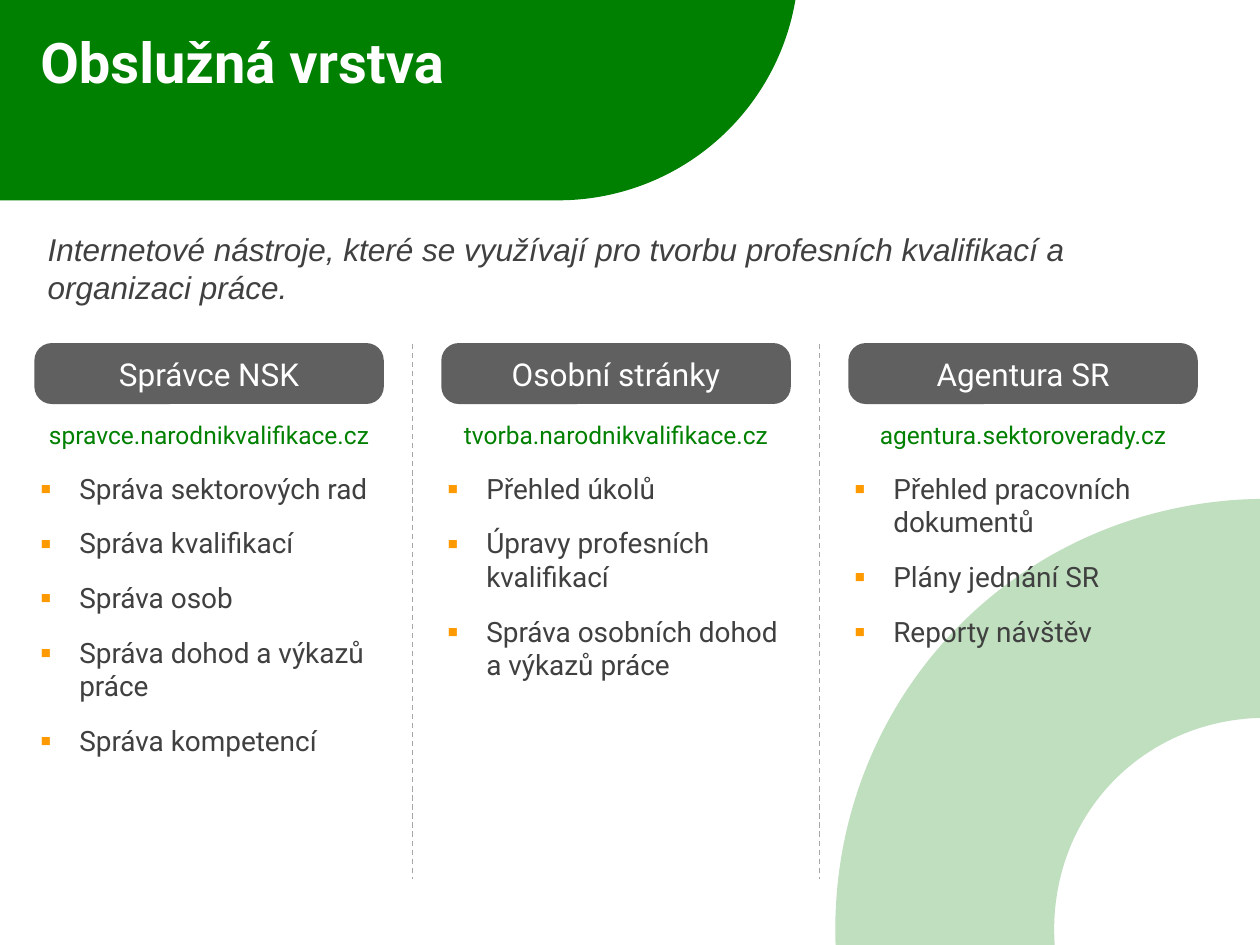
import dataclasses

import lxml.etree
import pptx
import pptx.dml.color
import pptx.enum.dml
import pptx.enum.shapes
import pptx.enum.text
import pptx.oxml.ns
import pptx.util

Align = pptx.enum.text.PP_ALIGN
Anchor = pptx.enum.text.MSO_ANCHOR
Preset = pptx.enum.shapes.MSO_SHAPE


@dataclasses.dataclass(frozen=True)
class Theme:
    green: str = "008000"
    grey: str = "606060"
    text: str = "404040"
    divider: str = "A6A6A6"
    bullet: str = "FF9900"
    white: str = "FFFFFF"
    font: str = "Roboto"
    intro_font: str = "Arial"
    title_size: int = 32
    heading_size: int = 18
    list_size: int = 16
    link_size: int = 14


@dataclasses.dataclass(frozen=True)
class Box:
    left: float
    top: float
    width: float
    height: float

    def rows(self, start, height):
        return Box(self.left, self.top + start, self.width, height)

    def columns(self, count, gap):
        width = (self.width - gap * (count - 1)) / count
        return [Box(self.left + i * (width + gap), self.top, width, self.height)
                for i in range(count)]

    def emu(self):
        return [pptx.util.Inches(v) for v in (self.left, self.top, self.width, self.height)]


THEME = Theme()
SLIDE = Box(0, 0, 10, 7.5)
COLUMN_GAP = 0.47
COLUMNS = [
    ("Správce NSK", "spravce.narodnikvalifikace.cz",
     ["Správa sektorových rad", "Správa kvalifikací", "Správa osob",
      "Správa dohod a výkazů práce", "Správa kompetencí"]),
    ("Osobní stránky", "tvorba.narodnikvalifikace.cz",
     ["Přehled úkolů", "Úpravy profesních kvalifikací",
      "Správa osobních dohod a výkazů práce"]),
    ("Agentura SR", "agentura.sektoroverady.cz",
     ["Přehled pracovních dokumentů", "Plány jednání SR", "Reporty návštěv"]),
]


def rgb(value):
    return pptx.dml.color.RGBColor.from_string(value)


def add_element(parent, tag, **attributes):
    return lxml.etree.SubElement(parent, pptx.oxml.ns.qn(tag), attributes)


def add_bullet(paragraph, indent):
    paragraph.level = 1
    properties = paragraph._p.get_or_add_pPr()
    properties.set("marL", str(pptx.util.Inches(indent)))
    properties.set("indent", str(-pptx.util.Inches(indent)))
    add_element(add_element(properties, "a:buClr"), "a:srgbClr", val=THEME.bullet)
    add_element(properties, "a:buFont", typeface=THEME.font)
    add_element(properties, "a:buChar", char="▪")


def write_text(shape, lines, size, color, font=THEME.font, bold=False, italic=False,
               align=Align.LEFT, anchor=Anchor.TOP, inset=(0.1, 0.05),
               before=0, after=0, bullet_indent=None):
    frame = shape.text_frame
    frame.word_wrap = True
    frame.auto_size = pptx.enum.text.MSO_AUTO_SIZE.NONE
    frame.vertical_anchor = anchor
    frame.margin_left = frame.margin_right = pptx.util.Inches(inset[0])
    frame.margin_top = frame.margin_bottom = pptx.util.Inches(inset[1])
    for index, line in enumerate(lines):
        paragraph = frame.add_paragraph() if index else frame.paragraphs[0]
        if bullet_indent:
            add_bullet(paragraph, bullet_indent)
        paragraph.alignment = align
        paragraph.space_before = pptx.util.Pt(before if index else 0)
        paragraph.space_after = pptx.util.Pt(after)
        run = paragraph.add_run()
        run.text = line
        run.font.name = font
        run.font.size = pptx.util.Pt(size)
        run.font.bold = bold
        run.font.italic = italic
        run.font.color.rgb = rgb(color)


def add_preset(slide, preset, box, color):
    shape = slide.shapes.add_shape(preset, *box.emu())
    shape.shadow.inherit = False
    shape.fill.solid()
    shape.fill.fore_color.rgb = rgb(color)
    shape.line.fill.background()
    return shape


def add_backdrop(slide, arc_box, banner_box):
    arc = add_preset(slide, Preset.BLOCK_ARC, arc_box, THEME.green)
    arc.rotation = 313.9
    color = arc._element.spPr.find(".//" + pptx.oxml.ns.qn("a:srgbClr"))
    add_element(color, "a:alpha", val="25000")
    banner = add_preset(slide, Preset.ROUNDED_RECTANGLE, banner_box, THEME.green)
    banner.adjustments[0] = 0.5


def place_title(slide, box):
    title = slide.shapes.title
    title.left, title.top, title.width, title.height = box.emu()
    write_text(title, ["Obslužná vrstva"], THEME.title_size, THEME.white, bold=True)
    tree = slide.shapes._spTree
    tree.remove(title._element)
    tree.append(title._element)


def add_intro(slide, box):
    write_text(slide.shapes.add_textbox(*box.emu()),
               ["Internetové nástroje, které se využívají pro tvorbu profesních "
                "kvalifikací a organizaci práce."],
               THEME.heading_size, THEME.text, font=THEME.intro_font, italic=True, after=12)


def add_divider(slide, box):
    left, top, _, height = box.emu()
    divider = slide.shapes.add_connector(
        pptx.enum.shapes.MSO_CONNECTOR.STRAIGHT, left, top, left, top + height)
    divider.line.color.rgb = rgb(THEME.divider)
    divider.line.width = pptx.util.Pt(0.75)
    divider.line.dash_style = pptx.enum.dml.MSO_LINE.DASH
    add_element(divider._element.spPr, "a:effectLst")


def add_column(slide, box, heading, link, items):
    header = add_preset(slide, Preset.ROUNDED_RECTANGLE, box.rows(0, 0.47), THEME.grey)
    header.adjustments[0] = 0.28
    header.line.color.rgb = rgb(THEME.grey)
    header.line.width = pptx.util.Pt(1)
    write_text(header, [heading], THEME.heading_size, THEME.white,
               align=Align.CENTER, anchor=Anchor.MIDDLE)
    write_text(slide.shapes.add_textbox(*box.rows(0.55, 0.34).emu()), [link],
               THEME.link_size, THEME.green, align=Align.CENTER,
               anchor=Anchor.MIDDLE, inset=(0, 0.05))
    write_text(slide.shapes.add_textbox(*box.rows(0.97, 3.35).emu()), items,
               THEME.list_size, THEME.text, inset=(0.04, 0.04),
               before=6, after=6, bullet_indent=0.31)


def add_columns(slide, box):
    cells = box.columns(len(COLUMNS), COLUMN_GAP)
    for cell in cells[1:]:
        add_divider(slide, Box(cell.left - COLUMN_GAP / 2, cell.top, 0, cell.height))
    for cell, content in zip(cells, COLUMNS):
        add_column(slide, cell, *content)


def main():
    presentation = pptx.Presentation()
    presentation.slide_width, presentation.slide_height = SLIDE.emu()[2:]
    slide = presentation.slides.add_slide(presentation.slide_layouts[5])
    add_backdrop(slide, Box(6.69, 3.9, 6.95, 7.18), Box(-3.5, -2.23, 9.84, 3.82))
    place_title(slide, Box(0.22, 0.17, 5.96, 1.11))
    add_intro(slide, Box(0.28, 1.78, 9.45, 0.71))
    add_columns(slide, Box(0.28, 2.73, 9.22, 4.25))
    presentation.save("out.pptx")


if __name__ == "__main__":
    main()
